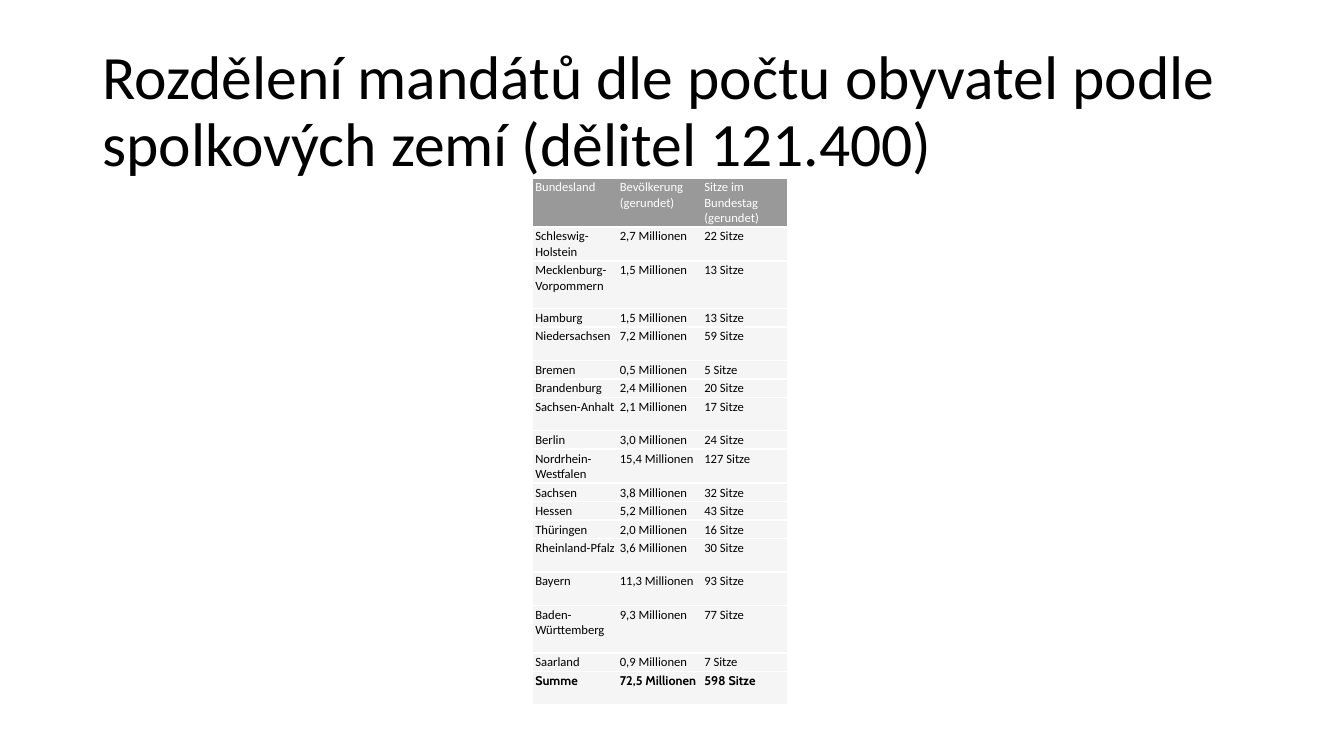
from lxml import etree
from pptx import Presentation
from pptx.dml.color import RGBColor
from pptx.enum.text import MSO_ANCHOR, MSO_AUTO_SIZE, PP_ALIGN
from pptx.oxml.ns import qn
from pptx.util import Cm, Pt

LEFT = PP_ALIGN.LEFT
MIDDLE = MSO_ANCHOR.MIDDLE
NO_AUTOFIT = MSO_AUTO_SIZE.NONE
TITLE_LAYOUT = 5

WHITE, BLACK = "FFFFFF", "000000"
HEADER_GREY, BODY_GREY = "999999", "F5F5F5"
ROW_HEIGHTS = {1: 0.46, 2: 0.84, 3: 1.2}  # lines of text: height in cm
COLUMN_WIDTH = 2.13

# Height in lines, state, population, seats
ROWS = [
    (3, "Bundesland", "Bevölkerung (gerundet)", "Sitze im Bundestag (gerundet)"),
    (2, "Schleswig-Holstein", "2,7 Millionen", "22 Sitze"),
    (3, "Mecklenburg-Vorpommern", "1,5 Millionen", "13 Sitze"),
    (1, "Hamburg", "1,5 Millionen", "13 Sitze"),
    (2, "Niedersachsen", "7,2 Millionen", "59 Sitze"),
    (1, "Bremen", "0,5 Millionen", "5 Sitze"),
    (1, "Brandenburg", "2,4 Millionen", "20 Sitze"),
    (2, "Sachsen-Anhalt", "2,1 Millionen", "17 Sitze"),
    (1, "Berlin", "3,0 Millionen", "24 Sitze"),
    (2, "Nordrhein-Westfalen", "15,4 Millionen", "127 Sitze"),
    (1, "Sachsen", "3,8 Millionen", "32 Sitze"),
    (1, "Hessen", "5,2 Millionen", "43 Sitze"),
    (1, "Thüringen", "2,0 Millionen", "16 Sitze"),
    (2, "Rheinland-Pfalz", "3,6 Millionen", "30 Sitze"),
    (2, "Bayern", "11,3 Millionen", "93 Sitze"),
    (3, "Baden-Württemberg", "9,3 Millionen", "77 Sitze"),
    (1, "Saarland", "0,9 Millionen", "7 Sitze"),
    (2, "Summe", "72,5 Millionen", "598 Sitze"),
]


def color(value):
    return RGBColor.from_string(value)


def set_borders(cell):
    """White rules above and below the cell, none at its sides."""
    properties = cell._tc.get_or_add_tcPr()
    for side in ("lnL", "lnR"):
        line = etree.SubElement(properties, qn(f"a:{side}"))
        etree.SubElement(line, qn("a:noFill"))
    for side in ("lnT", "lnB"):
        line = etree.SubElement(properties, qn(f"a:{side}"), w=str(Pt(1.2)))
        fill = etree.SubElement(line, qn("a:solidFill"))
        etree.SubElement(fill, qn("a:srgbClr"), val=WHITE)


presentation = Presentation()
presentation.slide_width = Cm(33.87)
presentation.slide_height = Cm(19.05)
slide = presentation.slides.add_slide(presentation.slide_layouts[TITLE_LAYOUT])

# Title
title = slide.shapes.title
title.left, title.top, title.width, title.height = Cm(2.33), Cm(1.01), Cm(29.21), Cm(3.68)
title.text_frame.text = "Rozdělení mandátů dle počtu obyvatel podle spolkových zemí (dělitel 121.400)"
title.text_frame.vertical_anchor = MIDDLE
title.text_frame.word_wrap = True
title.text_frame.auto_size = NO_AUTOFIT
paragraph = title.text_frame.paragraphs[0]
paragraph.alignment = LEFT
paragraph.line_spacing = 0.9
paragraph.font.name = "Calibri"
paragraph.font.size = Pt(44)
paragraph.font.color.rgb = color(BLACK)

# Table of seats by state
table = slide.shapes.add_table(
    len(ROWS), 3, Cm(13.44), Cm(4.48), Cm(3 * COLUMN_WIDTH),
    Cm(sum(ROW_HEIGHTS[row[0]] for row in ROWS)),
).table
table.horz_banding = False
for column in table.columns:
    column.width = Cm(COLUMN_WIDTH)

for row_index, (lines, *texts) in enumerate(ROWS):
    table.rows[row_index].height = Cm(ROW_HEIGHTS[lines])
    is_header = row_index == 0
    is_total = row_index == len(ROWS) - 1
    for column_index, text in enumerate(texts):
        cell = table.cell(row_index, column_index)
        cell.margin_left = cell.margin_right = cell.margin_top = Cm(0.05)
        cell.margin_bottom = Cm(0.03)
        set_borders(cell)
        cell.fill.solid()
        cell.fill.fore_color.rgb = color(HEADER_GREY if is_header else BODY_GREY)
        cell.text = text
        font = cell.text_frame.paragraphs[0].font
        font.name = "Cabin" if is_total else "Calibri"
        font.size = Pt(9)
        font.bold = is_total
        font.color.rgb = color(WHITE if is_header else BLACK)

presentation.save("out.pptx")
